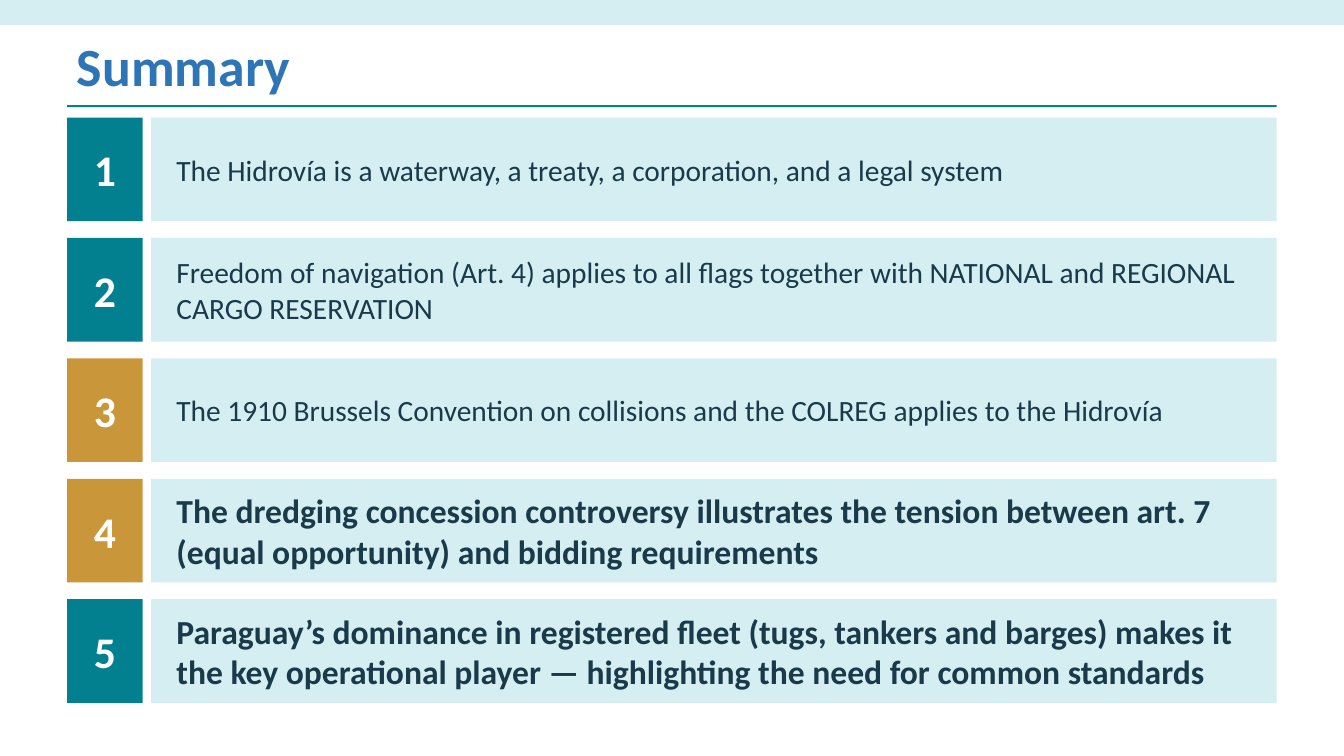
from pptx import Presentation
from pptx.dml.color import RGBColor
from pptx.enum.shapes import MSO_SHAPE
from pptx.enum.text import MSO_ANCHOR, PP_ALIGN
from pptx.util import Emu, Pt

RECTANGLE = MSO_SHAPE.RECTANGLE
MIDDLE = MSO_ANCHOR.MIDDLE
LEFT, CENTER = PP_ALIGN.LEFT, PP_ALIGN.CENTER

EMU_PER_PX = 6350  # 144 px to the inch
SLIDE_WIDTH, SLIDE_HEIGHT = 1920, 1080

TEAL, GOLD, PALE = "028090", "C9973A", "D4EEF2"
BLUE, INK, WHITE = "2E75B6", "1A3A4A", "FFFFFF"

MARGIN = 96
CONTENT_WIDTH = SLIDE_WIDTH - 2 * MARGIN
ROW_TOP, ROW_HEIGHT, ROW_STEP = 168, 148, 172
NUMBER_WIDTH, NUMBER_GAP = 108, 12

# Number colour, text size, bold, wording
POINTS = [
    (TEAL, 21, False, "The Hidrovía is a waterway, a treaty, a corporation, and a legal system"),
    (TEAL, 21, False, "Freedom of navigation (Art. 4) applies to all flags together with "
                      "NATIONAL and REGIONAL CARGO RESERVATION"),
    (GOLD, 21, False, "The 1910 Brussels Convention on collisions and the COLREG applies "
                      "to the Hidrovía"),
    (GOLD, 24, True, "The dredging concession controversy illustrates the tension between "
                     "art. 7 (equal opportunity) and bidding requirements"),
    (TEAL, 24, True, "Paraguay’s dominance in registered fleet (tugs, tankers and barges) "
                     "makes it the key operational player — highlighting the need for "
                     "common standards"),
]


def px(length):
    return Emu(length * EMU_PER_PX)


def color(value):
    return RGBColor.from_string(value)


class SlideBuilder:
    def __init__(self, slide, font="Calibri"):
        self.slide = slide
        self.font = font

    def rectangle(self, left, top, width, height, fill):
        shape = self.slide.shapes.add_shape(
            RECTANGLE, px(left), px(top), px(width), px(height))
        shape.shadow.inherit = False
        shape.fill.solid()
        shape.fill.fore_color.rgb = color(fill)
        shape.line.fill.background()
        return shape

    def text_box(self, left, top, width, height):
        return self.slide.shapes.add_textbox(px(left), px(top), px(width), px(height))

    def add_text(self, shape, text, size, text_color, bold=False, align=LEFT, insets=(18, 18)):
        frame = shape.text_frame
        frame.word_wrap = True
        frame.vertical_anchor = MIDDLE
        frame.margin_left = frame.margin_right = px(insets[0])
        frame.margin_top = frame.margin_bottom = px(insets[1])
        paragraph = frame.paragraphs[0]
        paragraph.alignment = align
        run = paragraph.add_run()
        run.text = text
        run.font.name = self.font
        run.font.size = Pt(size)
        run.font.bold = bold
        run.font.color.rgb = color(text_color)


def main():
    presentation = Presentation()
    presentation.slide_width = px(SLIDE_WIDTH)
    presentation.slide_height = px(SLIDE_HEIGHT)
    slide = presentation.slides.add_slide(presentation.slide_layouts[6])
    builder = SlideBuilder(slide)

    # Top band, title and rule
    builder.rectangle(0, 0, SLIDE_WIDTH, 36, PALE)
    title = builder.text_box(MARGIN, 45, CONTENT_WIDTH, 96)
    builder.add_text(title, "Summary", 38.4, BLUE, bold=True, insets=(14, 7))
    builder.rectangle(MARGIN, 150, CONTENT_WIDTH, 3, TEAL)

    # Numbered points
    text_left = MARGIN + NUMBER_WIDTH + NUMBER_GAP
    text_width = CONTENT_WIDTH - NUMBER_WIDTH - NUMBER_GAP
    for index, (number_fill, size, bold, text) in enumerate(POINTS):
        top = ROW_TOP + index * ROW_STEP
        number = builder.rectangle(MARGIN, top, NUMBER_WIDTH, ROW_HEIGHT, number_fill)
        builder.add_text(number, str(index + 1), 31.2, WHITE, bold=True, align=CENTER)
        panel = builder.rectangle(text_left, top, text_width, ROW_HEIGHT, PALE)
        builder.add_text(panel, text, size, INK, bold=bold, insets=(36, 18))

    presentation.save("out.pptx")


if __name__ == "__main__":
    main()
